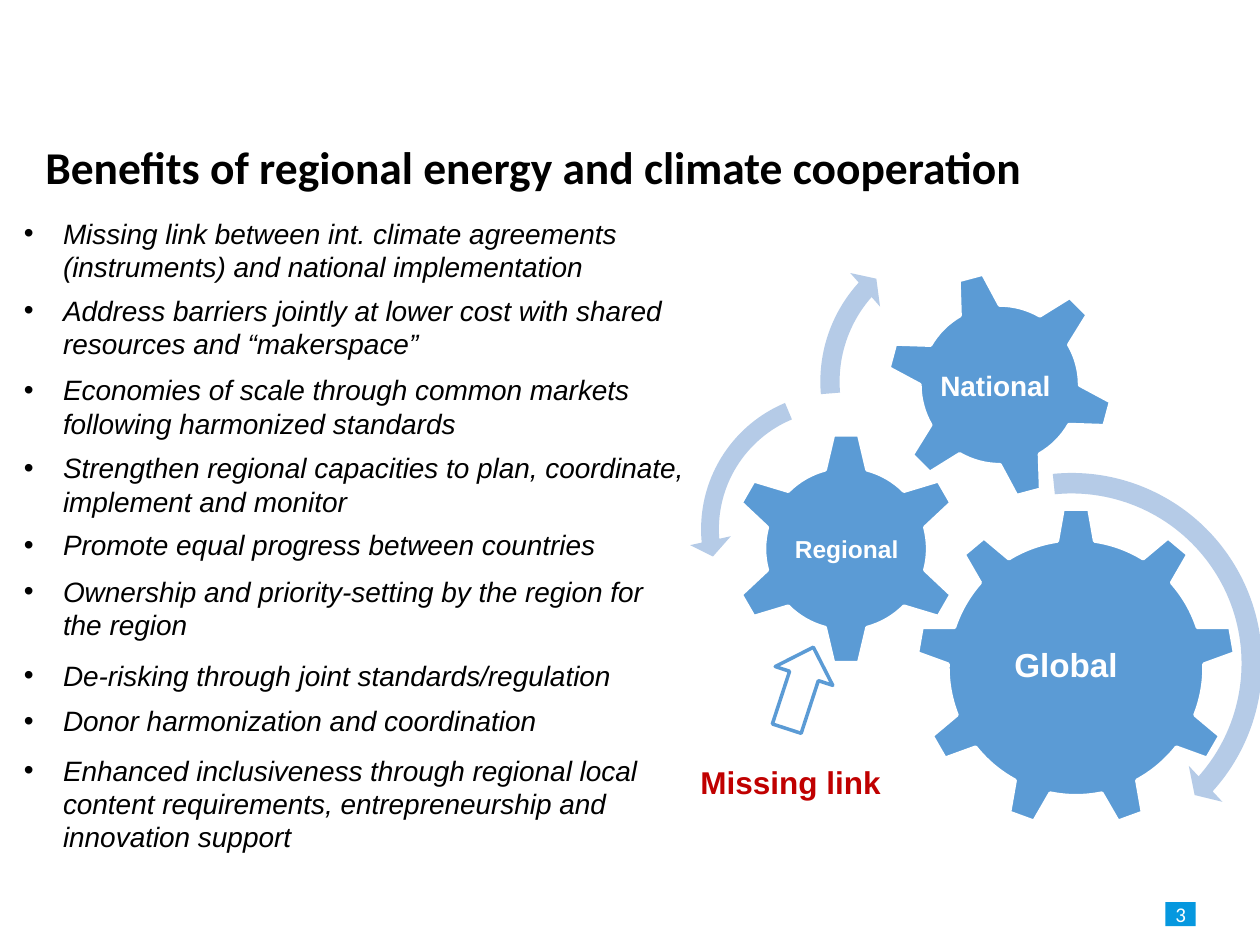
from dataclasses import dataclass
from typing import NamedTuple

from lxml.etree import SubElement
from pptx import Presentation
from pptx.dml.color import RGBColor
from pptx.enum.shapes import MSO_SHAPE
from pptx.enum.text import MSO_ANCHOR, MSO_AUTO_SIZE, PP_ALIGN
from pptx.oxml.ns import qn
from pptx.util import Inches, Pt


@dataclass(frozen=True)
class Theme:
    ink: RGBColor = RGBColor(0x00, 0x00, 0x00)
    white: RGBColor = RGBColor(0xFF, 0xFF, 0xFF)
    gear: RGBColor = RGBColor(0x5B, 0x9B, 0xD5)
    swirl: RGBColor = RGBColor(0xB5, 0xCB, 0xE7)
    accent: RGBColor = RGBColor(0xC0, 0x00, 0x00)
    badge: RGBColor = RGBColor(0x06, 0x98, 0xDF)
    heading_font: str = "Calibri"
    body_font: str = "Arial"
    title_size: int = 26
    body_size: int = 16
    body_leading: int = 19
    callout_size: int = 18
    badge_size: int = 12
    outline: int = 2


class Box(NamedTuple):
    left: float
    top: float
    width: float
    height: float


class Gear(NamedTuple):
    label: str
    kind: MSO_SHAPE
    box: Box
    label_box: Box
    label_size: int
    rotation: float = 0


class Swirl(NamedTuple):
    kind: MSO_SHAPE
    box: Box
    adjustments: tuple


class Benefit(NamedTuple):
    text: str
    space_before: float


THEME = Theme()

GEARS = (
    Gear("Global", MSO_SHAPE.GEAR_9, Box(7.27, 4.03, 2.54, 2.54), Box(7.7, 4.62, 1.52, 1.3), 19),
    Gear("Regional", MSO_SHAPE.GEAR_6, Box(5.79, 3.43, 1.85, 1.85), Box(6.26, 3.9, 0.92, 0.91), 14),
    Gear("National", MSO_SHAPE.GEAR_6, Box(7.03, 2.15, 1.81, 1.81), Box(7.39, 2.55, 1.02, 1.02), 16, 345),
)

SWIRLS = (
    Swirl(MSO_SHAPE.CIRCULAR_ARROW, Box(6.88, 3.64, 3.25, 3.25), (0.05, 2.99, 25.17, 158.6, 0.06)),
    Swirl(MSO_SHAPE.LEFT_CIRCULAR_ARROW, Box(5.47, 3.02, 2.36, 2.36), (0.06, 4.3, 104.89, 148.38, 0.07)),
    Swirl(MSO_SHAPE.CIRCULAR_ARROW, Box(6.41, 1.76, 2.54, 2.54), (0.06, 3.94, 133.14, 105.08, 0.07)),
)

BENEFITS = (
    Benefit("Missing link between int. climate agreements (instruments) and national implementation", 0),
    Benefit("Address barriers jointly at lower cost with shared resources and “makerspace”", 6),
    Benefit("Economies of scale through common markets following harmonized standards", 7.5),
    Benefit("Strengthen regional capacities to plan, coordinate, implement and monitor", 6.5),
    Benefit("Promote equal progress between countries", 6),
    Benefit("Ownership and priority-setting by the region for the region", 7.5),
    Benefit("De-risking through joint standards/regulation", 10),
    Benefit("Donor harmonization and coordination", 7),
    Benefit("Enhanced inclusiveness through regional local content requirements, "
            "entrepreneurship and innovation support", 9.5),
)


def place(shape, box: Box) -> None:
    shape.left, shape.top, shape.width, shape.height = map(Inches, box)


def set_frame(frame, inset: float, anchor: MSO_ANCHOR) -> None:
    frame.word_wrap = True
    frame.auto_size = MSO_AUTO_SIZE.NONE
    frame.vertical_anchor = anchor
    frame.margin_left = frame.margin_right = Inches(inset)
    frame.margin_top = frame.margin_bottom = Inches(inset)


def set_font(paragraph, name: str, size: float, color: RGBColor,
             bold: bool = False, italic: bool = False) -> None:
    font = paragraph.font
    font.name, font.size = name, Pt(size)
    font.bold, font.italic = bold, italic
    font.color.rgb = color


def add_filled(shapes, kind: MSO_SHAPE, box: Box, fill: RGBColor, line: RGBColor | None = None):
    shape = shapes.add_shape(kind, *map(Inches, box))
    shape.shadow.inherit = False
    shape.fill.solid()
    shape.fill.fore_color.rgb = fill
    if line is None:
        shape.line.fill.background()
    else:
        shape.line.color.rgb = line
        shape.line.width = Pt(THEME.outline)
    return shape


def add_label(shapes, text: str, box: Box, size: int, color: RGBColor, inset: float,
              anchor: MSO_ANCHOR, align: PP_ALIGN) -> None:
    frame = shapes.add_textbox(*map(Inches, box)).text_frame
    set_frame(frame, inset, anchor)
    label = frame.paragraphs[0]
    label.text = text
    label.alignment = align
    set_font(label, THEME.body_font, size, color, bold=True)


def add_gear(shapes, gear: Gear) -> None:
    wheel = add_filled(shapes, gear.kind, gear.box, THEME.gear, THEME.white)
    wheel.rotation = gear.rotation
    add_label(shapes, gear.label, gear.label_box, gear.label_size, THEME.white,
              0.02, MSO_ANCHOR.MIDDLE, PP_ALIGN.CENTER)


def add_swirl(shapes, swirl: Swirl) -> None:
    arrow = add_filled(shapes, swirl.kind, swirl.box, THEME.swirl)
    for index, value in enumerate(swirl.adjustments):
        arrow.adjustments[index] = value


def write_title(placeholder) -> None:
    place(placeholder, Box(0.31, 0.75, 9.52, 1.2))
    set_frame(placeholder.text_frame, 0.05, MSO_ANCHOR.MIDDLE)
    heading = placeholder.text_frame.paragraphs[0]
    heading.text = "Benefits of regional energy and climate cooperation"
    heading.alignment = PP_ALIGN.LEFT
    heading.line_spacing = 0.9
    set_font(heading, THEME.heading_font, THEME.title_size, THEME.ink, bold=True)


def write_benefits(placeholder) -> None:
    place(placeholder, Box(0.14, 1.67, 5.37, 5.65))
    frame = placeholder.text_frame
    set_frame(frame, 0.05, MSO_ANCHOR.TOP)
    for index, benefit in enumerate(BENEFITS):
        item = frame.add_paragraph() if index else frame.paragraphs[0]
        item.text = benefit.text
        item.line_spacing = Pt(THEME.body_leading)
        item.space_before = Pt(benefit.space_before)
        item.space_after = Pt(0)
        properties = item._p.get_or_add_pPr()
        properties.set("marL", str(Inches(0.31)))
        properties.set("indent", str(-Inches(0.31)))
        SubElement(properties, qn("a:buChar")).set("char", "•")
        set_font(item, THEME.body_font, THEME.body_size, THEME.ink, italic=True)


def add_page_badge(shapes) -> None:
    badge = add_filled(shapes, MSO_SHAPE.RECTANGLE, Box(9.25, 7.16, 0.24, 0.19), THEME.badge)
    set_frame(badge.text_frame, 0, MSO_ANCHOR.MIDDLE)
    number = badge.text_frame.paragraphs[0]
    number.text = "3"
    number.alignment = PP_ALIGN.CENTER
    set_font(number, THEME.heading_font, THEME.badge_size, THEME.white)


def main() -> None:
    deck = Presentation()
    deck.slide_width, deck.slide_height = Inches(10), Inches(7.5)
    slide = deck.slides.add_slide(deck.slide_layouts[1])
    write_title(slide.shapes.title)
    write_benefits(slide.placeholders[1])
    add_page_badge(slide.shapes)

    gearwork = slide.shapes.add_group_shape().shapes
    for gear in GEARS:
        add_gear(gearwork, gear)
    for swirl in SWIRLS:
        add_swirl(gearwork, swirl)

    pointer = add_filled(slide.shapes, MSO_SHAPE.RIGHT_ARROW, Box(6.01, 5.22, 0.68, 0.48),
                         THEME.white, THEME.gear)
    pointer.rotation = 288.1
    add_label(slide.shapes, "Missing link", Box(5.51, 6.01, 1.64, 0.4), THEME.callout_size,
              THEME.accent, 0.05, MSO_ANCHOR.TOP, PP_ALIGN.LEFT)
    deck.save("out.pptx")


if __name__ == "__main__":
    main()
